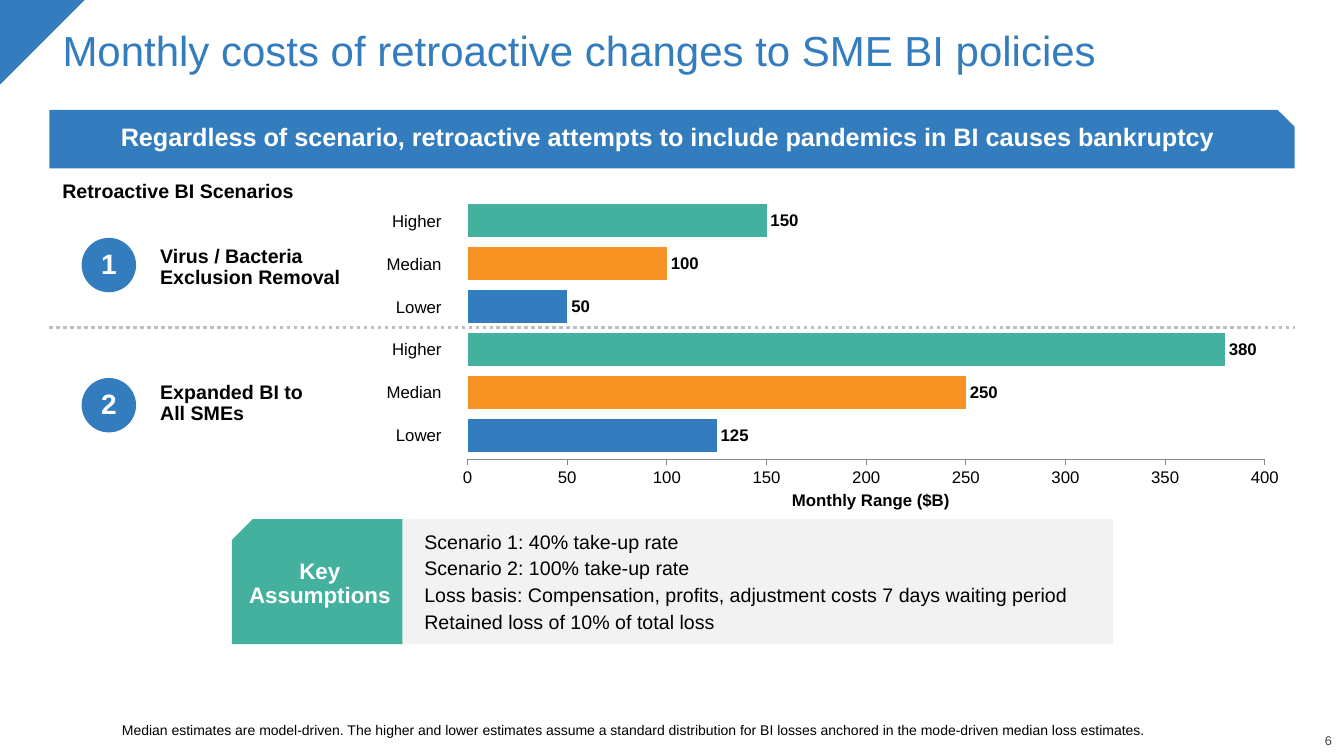
from dataclasses import dataclass

from lxml import etree
from pptx import Presentation
from pptx.chart.data import CategoryChartData
from pptx.dml.color import RGBColor
from pptx.enum.chart import XL_CHART_TYPE, XL_LABEL_POSITION, XL_TICK_MARK
from pptx.enum.dml import MSO_LINE
from pptx.enum.shapes import MSO_CONNECTOR, MSO_SHAPE
from pptx.enum.text import MSO_ANCHOR, MSO_AUTO_SIZE, PP_ALIGN
from pptx.oxml.ns import qn
from pptx.util import Pt

LEFT, CENTER, RIGHT = PP_ALIGN.LEFT, PP_ALIGN.CENTER, PP_ALIGN.RIGHT
TOP, MIDDLE, BOTTOM = MSO_ANCHOR.TOP, MSO_ANCHOR.MIDDLE, MSO_ANCHOR.BOTTOM
RECT, SNIP = MSO_SHAPE.RECTANGLE, MSO_SHAPE.SNIP_1_RECTANGLE
TRIANGLE, OVAL = MSO_SHAPE.RIGHT_TRIANGLE, MSO_SHAPE.OVAL
PX = 9144  # 100 px to the inch
INSETS = (10, 5, 10, 5)


@dataclass(frozen=True)
class Theme:
    font: str = "Arial"
    blue: str = "337DBE"
    orange: str = "F69322"
    green: str = "43B19E"
    panel: str = "F2F2F2"
    dots: str = "BFBFBF"
    axis: str = "868686"
    grey: str = "404040"
    black: str = "000000"
    white: str = "FFFFFF"
    title: int = 30
    number: int = 20
    banner: int = 18
    key: int = 16
    body: int = 14
    label: int = 12
    note: int = 10
    page: int = 9


T = Theme()


def px(*values):
    return [v * PX for v in values]


def rgb(color):
    return RGBColor.from_string(color)


def style_font(font, size, color=T.black, bold=False):
    font.name, font.size, font.bold = T.font, Pt(size), bold
    font.color.rgb = rgb(color)


def write(tf, lines, size, color=T.black, bold=False, align=LEFT,
          anchor=TOP, insets=INSETS, gap=0, spacing=0.9):
    """Fill a text frame, one paragraph a line; a newline breaks the line."""
    tf.word_wrap = True
    tf.vertical_anchor = anchor
    tf.margin_left, tf.margin_top, tf.margin_right, tf.margin_bottom = px(*insets)
    for i, line in enumerate(lines):
        p = tf.add_paragraph() if i else tf.paragraphs[0]
        p.alignment, p.line_spacing = align, spacing
        p.space_before = Pt(gap if i else 0)
        for j, part in enumerate(line.split("\n")):
            if j:
                p.add_line_break()
            r = p.add_run()
            r.text = part
            style_font(r.font, size, color, bold)


def add_text(s, box, lines, size, **options):
    sp = s.shapes.add_textbox(*px(*box))
    write(sp.text_frame, lines, size, **options)


def add_block(s, kind, box, color):
    sp = s.shapes.add_shape(kind, *px(*box))
    sp.shadow.inherit = False
    sp.fill.solid()
    sp.fill.fore_color.rgb = rgb(color)
    sp.line.fill.background()
    return sp


def fill_placeholder(sp, box, text, size, **options):
    sp.left, sp.top, sp.width, sp.height = px(*box)
    write(sp.text_frame, [text], size, **options)
    sp.text_frame.auto_size = MSO_AUTO_SIZE.NONE


def remove_bullet(p):
    pPr = p._p.get_or_add_pPr()
    pPr.set("marL", "0")
    pPr.set("indent", "0")
    etree.SubElement(pPr, qn("a:buNone"))


def add_dotted_line(s, x1, x2, y):
    line = s.shapes.add_connector(MSO_CONNECTOR.STRAIGHT, *px(x1, y, x2, y))
    line.line.color.rgb = rgb(T.dots)
    line.line.width = Pt(2.5)
    line.line.dash_style = MSO_LINE.ROUND_DOT
    etree.SubElement(line._element.spPr, qn("a:effectLst"))


def set_plot_area(chart, x, y, w, h):
    area = chart._chartSpace.find(".//" + qn("c:plotArea"))
    for old in area.findall(qn("c:layout")):
        area.remove(old)
    layout = etree.Element(qn("c:layout"))
    manual = etree.SubElement(layout, qn("c:manualLayout"))
    values = dict(layoutTarget="inner", xMode="edge", yMode="edge", x=x, y=y, w=w, h=h)
    for tag, value in values.items():
        etree.SubElement(manual, qn("c:" + tag)).set("val", str(value))
    area.insert(0, layout)


def add_cost_chart(s, box, values, colors):
    data = CategoryChartData(number_format="#,##0")
    data.categories = ["1"]
    for i, value in enumerate(values, 1):
        data.add_series(f"Series {i}", [value])
    chart = s.shapes.add_chart(XL_CHART_TYPE.BAR_CLUSTERED, *px(*box), data).chart
    chart.has_legend = chart.has_title = False
    style_font(chart.font, T.label)
    plot = chart.plots[0]
    plot.gap_width, plot.overlap, plot.vary_by_categories = 40, -30, False
    for i, series in enumerate(plot.series):
        series.format.fill.solid()
        series.format.fill.fore_color.rgb = rgb(colors[i % len(colors)])
        labels = series.data_labels
        labels.show_value = True
        labels.position = XL_LABEL_POSITION.OUTSIDE_END
        style_font(labels.font, T.label, bold=True)
    chart.category_axis.visible = False
    axis = chart.value_axis
    axis.minimum_scale, axis.maximum_scale, axis.major_unit = 0, 400, 50
    axis.has_major_gridlines = False
    axis.major_tick_mark = XL_TICK_MARK.OUTSIDE
    axis.format.line.color.rgb = rgb(T.axis)
    r = axis.axis_title.text_frame.paragraphs[0].add_run()
    r.text = "Monthly Range ($B)"
    style_font(r.font, T.label, bold=True)
    set_plot_area(chart, 0.337, 0.021, 0.647, 0.807)


def add_label_table(s, box, labels):
    table = s.shapes.add_table(len(labels), 1, *px(*box)).table
    table.first_row = table.horz_banding = False
    for row, label in enumerate(labels):
        cell = table.cell(row, 0)
        cell.fill.background()
        cell.vertical_anchor = MIDDLE
        write(cell.text_frame, [label], T.label, align=RIGHT, anchor=MIDDLE, spacing=1.0)


def add_scenario(s, number, text, circle_y, text_y):
    add_text(s, (149, text_y, 204, 67), [text], T.body, bold=True, anchor=MIDDLE)
    circle = add_block(s, OVAL, (81, circle_y, 54, 54), T.blue)
    write(circle.text_frame, [number], T.number, color=T.white, bold=True,
          align=CENTER, anchor=MIDDLE, insets=(0, 0, 0, 0))


def add_assumptions(s):
    add_block(s, RECT, (392, 515, 712, 124), T.panel)
    key = add_block(s, SNIP, (230, 515, 169, 124), T.green)
    key._element.spPr.find(qn("a:xfrm")).set("flipH", "1")
    write(key.text_frame, ["Key Assumptions"], T.key, color=T.white, bold=True,
          align=CENTER, anchor=MIDDLE, insets=(5, 5, 10, 10))
    add_text(s, (411, 523, 692, 102), [
        "Scenario 1: 40% take-up rate",
        "Scenario 2: 100% take-up rate",
        "Loss basis: Compensation, profits, adjustment costs 7 days waiting period",
        "Retained loss of 10% of total loss",
    ], T.body, gap=4)


def main():
    prs = Presentation()
    prs.slide_width, prs.slide_height = px(1333, 750)
    s = prs.slides.add_slide(prs.slide_layouts[1])

    # Page furniture
    add_text(s, (1257, 729, 64, 13), ["6"], T.page, color=T.grey,
             align=RIGHT, anchor=BOTTOM, insets=(0, 0, 0, 0))
    add_block(s, TRIANGLE, (0, 0, 84, 84), T.blue).rotation = 90

    # Title, banner and footnote
    fill_placeholder(s.shapes.title, (52, 25, 1233, 104),
                     "Monthly costs of retroactive changes to SME BI policies",
                     T.title, color=T.blue)
    banner = add_block(s, SNIP, (49, 109, 1235, 58), T.blue)
    banner.adjustments[0] = 0.29
    write(banner.text_frame,
          ["Regardless of scenario, retroactive attempts to include pandemics in BI causes bankruptcy"],
          T.banner, color=T.white, bold=True, align=CENTER, anchor=MIDDLE,
          insets=(20, 10, 20, 20))
    note = s.placeholders[1]
    remove_bullet(note.text_frame.paragraphs[0])
    fill_placeholder(note, (121, 688, 1164, 45),
                     "Median estimates are model-driven. The higher and lower estimates assume a standard "
                     "distribution for BI losses anchored in the mode-driven median loss estimates.",
                     T.note, anchor=BOTTOM, insets=(0, 0, 0, 0))

    # Chart with its row labels
    add_cost_chart(s, (52, 189, 1222, 322), [125, 250, 380, 50, 100, 150],
                   [T.blue, T.orange, T.green])
    add_label_table(s, (313, 199, 135, 254), ["Higher", "Median", "Lower"] * 2)
    add_dotted_line(s, 49, 1284, 325)

    # Scenarios and assumptions
    add_text(s, (52, 166, 313, 49), ["Retroactive BI Scenarios"], T.body,
             bold=True, anchor=MIDDLE)
    add_scenario(s, "1", "Virus / Bacteria Exclusion Removal", 236, 232)
    add_scenario(s, "2", "Expanded BI to\nAll SMEs", 375, 367)
    add_assumptions(s)

    prs.save("out.pptx")


if __name__ == "__main__":
    main()
